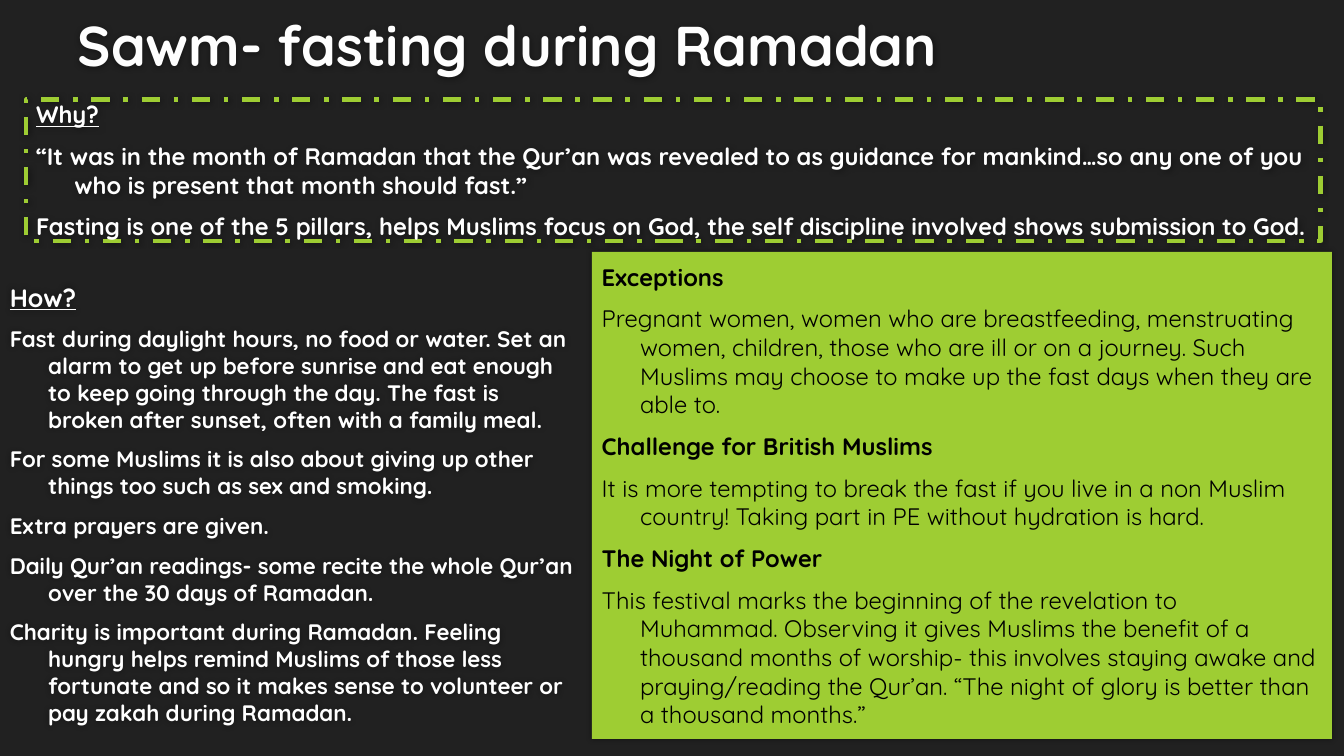
import pptx
import pptx.util
import pptx.dml.color
import pptx.enum.dml
import pptx.enum.shapes
import pptx.enum.text
import pptx.oxml

PX = 9144  # EMU per px, 100 px to the inch
FONT = "Quicksand"
GREEN, WHITE, BLACK = "9ECD33", "FFFFFF", "000000"
SHADOW = (
    '<a:effectLst xmlns:a="http://schemas.openxmlformats.org/drawingml/2006/main">'
    '<a:outerShdw blurRad="50800" dist="0" dir="14400000">'
    '<a:srgbClr val="000000"><a:alpha val="40000"/></a:srgbClr>'
    '</a:outerShdw></a:effectLst>'
)


def color(value):
    return pptx.dml.color.RGBColor.from_string(value)


def style(para, size, ink, bold):
    for span in para.runs:
        span.font.name = FONT
        span.font.size = pptx.util.Pt(size)
        span.font.bold = bold
        span.font.color.rgb = color(ink)


deck = pptx.Presentation()
deck.slide_width, deck.slide_height = 1333 * PX, 750 * PX
page = deck.slides.add_slide(deck.slide_layouts[5])
page.background.fill.solid()
page.background.fill.fore_color.rgb = color("212121")

# Title
title = page.shapes.title
title.left, title.top, title.width, title.height = 67 * PX, -3 * PX, 1200 * PX, 85 * PX
title.text_frame.text = "Sawm- fasting during Ramadan"
title.text_frame.auto_size = pptx.enum.text.MSO_AUTO_SIZE.NONE
title.text_frame.vertical_anchor = pptx.enum.text.MSO_ANCHOR.BOTTOM
title.text_frame.paragraphs[0].alignment = pptx.enum.text.PP_ALIGN.LEFT
style(title.text_frame.paragraphs[0], 40, "FEFEFE", True)
title.element.spPr.append(pptx.oxml.parse_xml(SHADOW))

# Text of the three panels: heading flag, wording
why = [
    (True, "Why?"),
    (False, "“It was in the month of Ramadan that the Qur’an was revealed to as guidance for "
            "mankind…so any one of you who is present that month should fast.”"),
    (False, "Fasting is one of the 5 pillars, helps Muslims focus on God, the self discipline "
            "involved shows submission to God."),
]
how = [
    (True, "How?"),
    (False, "Fast during daylight hours, no food or water. Set an alarm to get up before sunrise "
            "and eat enough to keep going through the day. The fast is broken after sunset, "
            "often with a family meal."),
    (False, "For some Muslims it is also about giving up other things too such as sex and smoking."),
    (False, "Extra prayers are given."),
    (False, "Daily Qur’an readings- some recite the whole Qur’an over the 30 days of Ramadan."),
    (False, "Charity is important during Ramadan. Feeling hungry helps remind Muslims of those "
            "less fortunate and so it makes sense to volunteer or pay zakah during Ramadan."),
]
more = [
    (True, "Exceptions"),
    (False, "Pregnant women, women who are breastfeeding, menstruating women, children, those who "
            "are ill or on a journey. Such Muslims may choose to make up the fast days when they "
            "are able to."),
    (True, "Challenge for British Muslims"),
    (False, "It is more tempting to break the fast if you live in a non Muslim country! Taking "
            "part in PE without hydration is hard."),
    (True, "The Night of Power"),
    (False, "This festival marks the beginning of the revelation to Muhammad. Observing it gives "
            "Muslims the benefit of a thousand months of worship- this involves staying awake and "
            "praying/reading the Qur’an. “The night of glory is better than a thousand months.”"),
]

# Panels: place, text, heading size, body size, fill, outline
panels = [
    ((26, 99, 1284, 140), why, 17, 17, None, GREEN),
    ((0, 250, 580, 500), how, 18, 16, None, None),
    ((587, 250, 734, 483), more, 17, 17, GREEN, None),
]
for place, lines, heading_size, body_size, fill, outline in panels:
    box = page.shapes.add_shape(pptx.enum.shapes.MSO_SHAPE.RECTANGLE, *[n * PX for n in place])
    box.fill.background()
    box.line.fill.background()
    if fill:
        box.fill.solid()
        box.fill.fore_color.rgb = color(fill)
    if outline:
        box.line.color.rgb = color(outline)
        box.line.width = pptx.util.Pt(3.25)
        box.line.dash_style = pptx.enum.dml.MSO_LINE.DASH_DOT
    box.element.spPr.append(pptx.oxml.parse_xml(SHADOW))

    frame = box.text_frame
    frame.word_wrap = True
    frame.vertical_anchor = pptx.enum.text.MSO_ANCHOR.MIDDLE
    for index, (heading, wording) in enumerate(lines):
        para = frame.add_paragraph() if index else frame.paragraphs[0]
        para.text = wording
        size = heading_size if heading else body_size
        style(para, size, BLACK if fill else WHITE, heading or not fill)
        para.runs[0].font.underline = heading and not fill
        para.alignment = pptx.enum.text.PP_ALIGN.LEFT
        para.space_before = pptx.util.Pt(round(size * 0.2, 1))
        para.space_after = pptx.util.Pt(6)
        # Hanging indent
        layout = para._p.get_or_add_pPr()
        layout.set("marL", str(38 * PX))
        layout.set("indent", str(-38 * PX))

deck.save("out.pptx")
